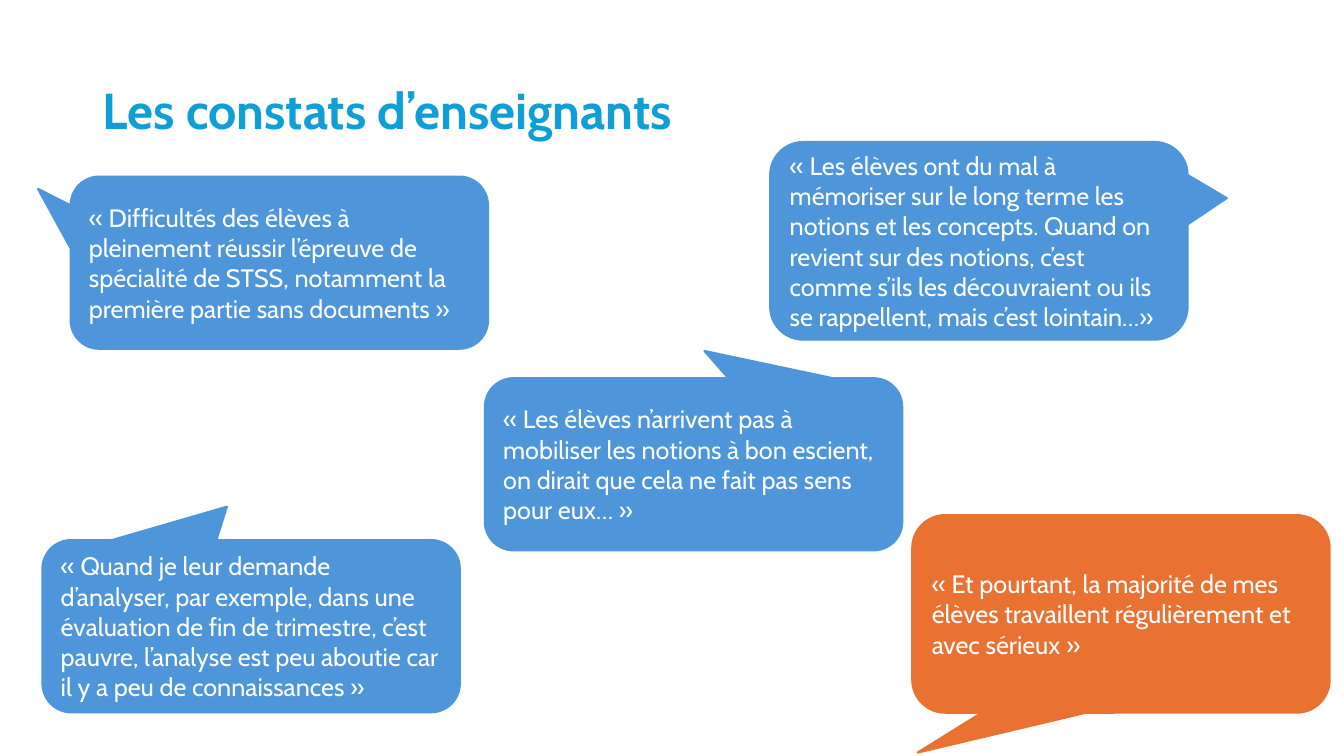
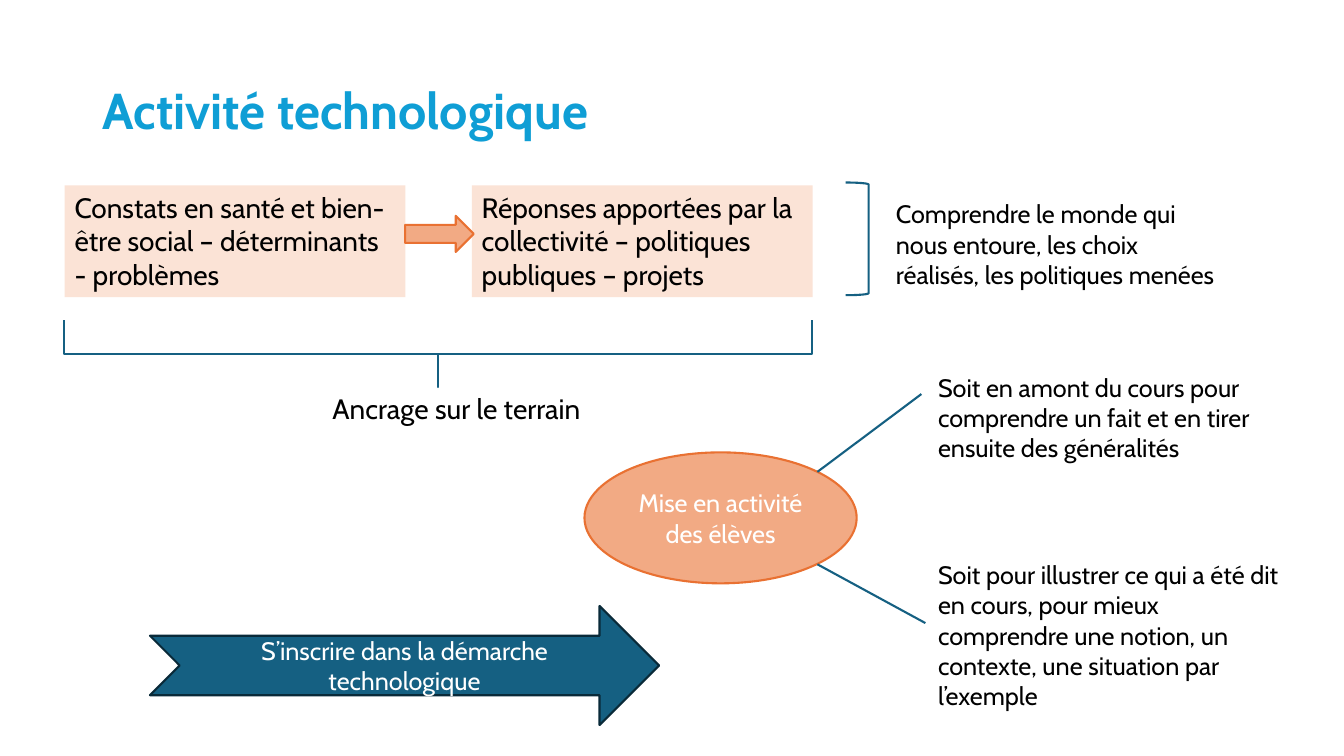
from lxml.etree import SubElement
from pptx import Presentation
from pptx.dml.color import RGBColor
from pptx.enum.shapes import MSO_CONNECTOR as Connector, MSO_SHAPE as Preset
from pptx.enum.text import MSO_ANCHOR as Anchor, MSO_AUTO_SIZE as AutoSize, PP_ALIGN as Align
from pptx.oxml.ns import qn
from pptx.util import Cm, Pt

FONT = "Cabin"
TITLE_BLUE = RGBColor(0x0F, 0x9E, 0xD5)
BLUE = RGBColor(0x4E, 0x95, 0xD9)
ORANGE = RGBColor(0xE9, 0x71, 0x32)
PEACH = RGBColor(0xF2, 0xAA, 0x84)
PALE_PEACH = RGBColor(0xFB, 0xE3, 0xD6)
TEAL = RGBColor(0x15, 0x60, 0x82)
DARK_TEAL = RGBColor(0x09, 0x2A, 0x39)
WHITE = RGBColor(0xFF, 0xFF, 0xFF)
BLACK = RGBColor(0x00, 0x00, 0x00)
LINE_WIDTH = Pt(1.5)


def write_text(box, text, size=18, color=BLACK, bold=False, align=Align.LEFT,
               anchor=Anchor.TOP, spacing=1.0):
    frame = box.text_frame
    frame.word_wrap = True
    frame.auto_size = AutoSize.NONE
    frame.vertical_anchor = anchor
    para = frame.paragraphs[0]
    para.alignment = align
    para.line_spacing = spacing
    span = para.add_run()
    span.text = text
    span.font.name = FONT
    span.font.size = Pt(size)
    span.font.bold = bold
    span.font.color.rgb = color


def draw_shape(page, preset, place, fill=None, line=None):
    shape = page.shapes.add_shape(preset, *map(Cm, place))
    shape.shadow.inherit = False
    if fill is None:
        shape.fill.background()
    else:
        shape.fill.solid()
        shape.fill.fore_color.rgb = fill
    if line is None:
        shape.line.fill.background()
    else:
        shape.line.color.rgb = line
        shape.line.width = LINE_WIDTH
    return shape


deck = Presentation()
deck.slide_width = Cm(33.87)
deck.slide_height = Cm(19.05)

pages = []
for heading in ("Les constats d’enseignants", "Activité technologique"):
    page = deck.slides.add_slide(deck.slide_layouts[5])
    title = page.shapes.title
    title.left, title.top, title.width, title.height = map(Cm, (2.33, 1.01, 29.21, 3.68))
    write_text(title, heading, size=36, color=TITLE_BLUE, bold=True,
               anchor=Anchor.MIDDLE, spacing=0.9)
    pages.append(page)
findings, activity = pages

QUOTE_WIDTH = 10.52
SHORT, TALL = 4.34, 4.98
quotes = [
    (1.78, 4.45, SHORT, (-0.578, -0.428), BLUE,
     "« Difficultés des élèves à pleinement réussir l’épreuve de spécialité de STSS, "
     "notamment la première partie sans documents »"),
    (19.41, 3.58, TALL, (0.594, -0.216), BLUE,
     "« Les élèves ont du mal à mémoriser sur le long terme les notions et les concepts. "
     "Quand on revient sur des notions, c’est comme s’ils les découvraient ou ils se "
     "rappellent, mais c’est lointain…»"),
    (1.07, 13.61, SHORT, (-0.058, -0.694), BLUE,
     "« Quand je leur demande d’analyser, par exemple, dans une évaluation de fin de "
     "trimestre, c’est pauvre, l’analyse est peu aboutie car il y a peu de connaissances »"),
    (22.99, 12.98, TALL, (-0.487, 0.702), ORANGE,
     "« Et pourtant, la majorité de mes élèves travaillent régulièrement et avec sérieux »"),
    (12.22, 9.53, SHORT, (0.026, -0.658), BLUE,
     "« Les élèves n’arrivent pas à mobiliser les notions à bon escient, on dirait que cela "
     "ne fait pas sens pour eux… »"),
]
for left, top, height, tip, color, text in quotes:
    bubble = draw_shape(findings, Preset.ROUNDED_RECTANGULAR_CALLOUT,
                        (left, top, QUOTE_WIDTH, height), fill=color, line=color)
    bubble.adjustments[0], bubble.adjustments[1] = tip
    write_text(bubble, text, color=WHITE, anchor=Anchor.MIDDLE)

steps = [
    (1.63, "Constats en santé et bien-être social – déterminants - problèmes"),
    (11.89, "Réponses apportées par la collectivité – politiques publiques – projets"),
]
for left, text in steps:
    step = draw_shape(activity, Preset.RECTANGLE, (left, 4.67, 8.59, 2.82), fill=PALE_PEACH)
    write_text(step, text, size=20)
draw_shape(activity, Preset.RIGHT_ARROW, (10.21, 5.44, 1.73, 0.91), fill=PEACH, line=ORANGE)

brace = draw_shape(activity, Preset.RIGHT_BRACE, (10.19, -0.51, 1.68, 18.85), line=TEAL)
brace.rotation = 90
brace.adjustments[0] = 0
brace.adjustments[1] = 0.5
draw_shape(activity, Preset.RIGHT_BRACKET, (21.31, 4.6, 0.58, 2.84), line=TEAL)

notes = [
    ((8.13, 9.75, 8.59, 1.12), 20, "Ancrage sur le terrain"),
    ((22.33, 4.88, 8.59, 2.57), 18,
     "Comprendre le monde qui nous entoure, les choix réalisés, les politiques menées"),
    ((23.39, 9.25, 9.25, 2.57), 18,
     "Soit en amont du cours pour comprendre un fait et en tirer ensuite des généralités"),
    ((23.39, 13.97, 9.25, 4.11), 18,
     "Soit pour illustrer ce qui a été dit en cours, pour mieux comprendre une notion, "
     "un contexte, une situation par l’exemple"),
]
for place, size, text in notes:
    write_text(activity.shapes.add_textbox(*map(Cm, place)), text, size=size)

emphases = [
    (Preset.OVAL, (14.73, 11.4, 6.86, 3.3), PEACH, ORANGE, "Mise en activité des élèves"),
    (Preset.NOTCHED_RIGHT_ARROW, (3.78, 15.27, 12.83, 3), TEAL, DARK_TEAL,
     "S’inscrire dans la démarche technologique"),
]
for preset, place, fill, line, text in emphases:
    emphasis = draw_shape(activity, preset, place, fill=fill, line=line)
    write_text(emphasis, text, color=WHITE, align=Align.CENTER, anchor=Anchor.MIDDLE)

for ends in ((20.6, 11.89, 23.22, 9.93), (20.6, 14.22, 23.32, 15.7)):
    branch = activity.shapes.add_connector(Connector.STRAIGHT, *map(Cm, ends))
    branch.line.color.rgb = TEAL
    branch.line.width = LINE_WIDTH
    SubElement(branch._element.spPr, qn("a:effectLst"))

deck.save("out.pptx")
